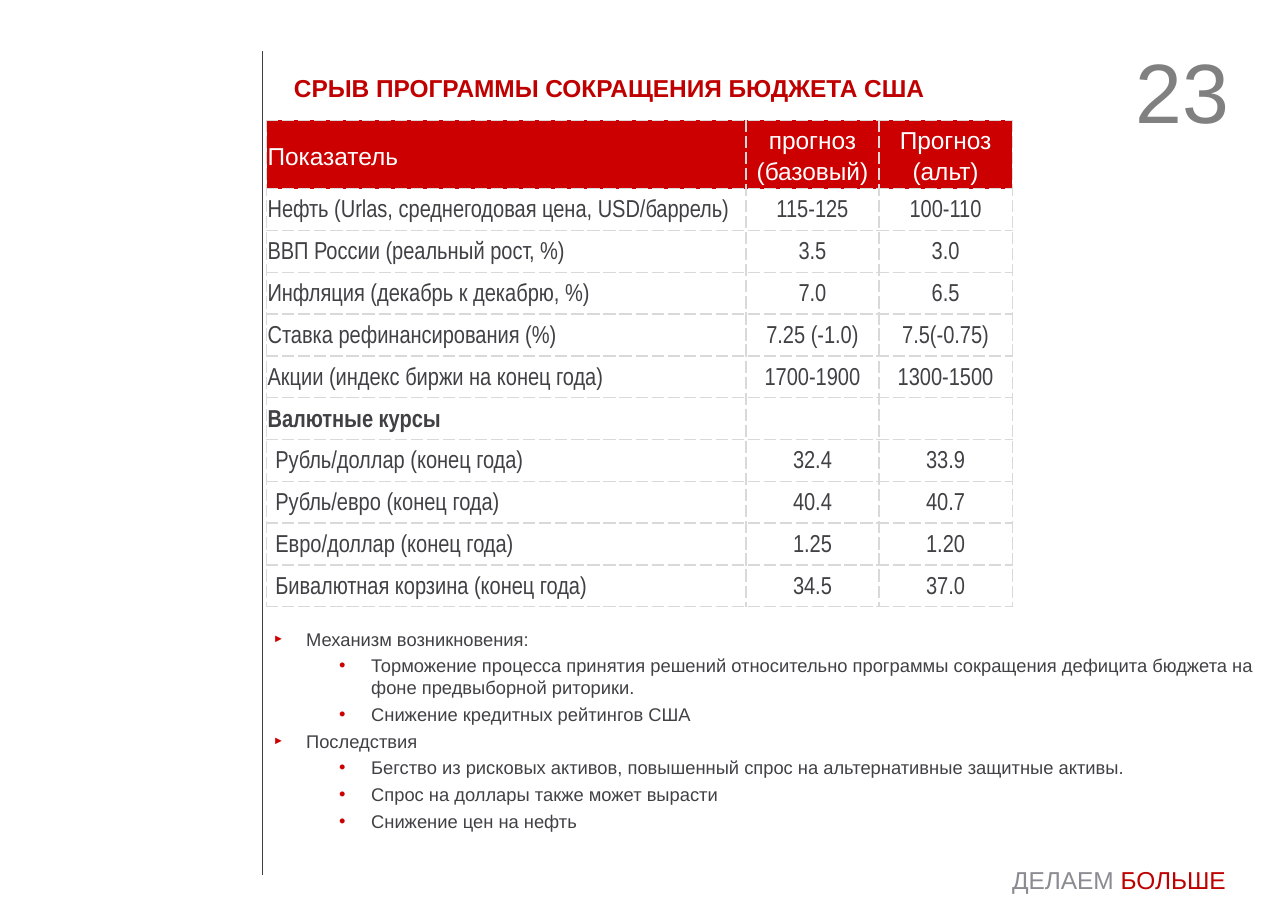
import pptx
import pptx.dml.color
import pptx.enum.shapes
import pptx.enum.text
import pptx.oxml
import pptx.oxml.ns
import pptx.util
from pptx.util import Cm

COLORS = {
    "rule": "3E3F43",
    "slogan": "8B8B92",
    "accent": "BE0000",
    "title": "C00000",
    "number": "808080",
    "header": "CC0000",
    "header_text": "FFFFFF",
    "body": "414145",
    "border": "D9D9D9",
    "bullet": "CC0000",
}
ALIGN = pptx.enum.text.PP_ALIGN
ANCHOR = pptx.enum.text.MSO_ANCHOR

HEADER = ("Показатель", "прогноз (базовый)", "Прогноз (альт)")
FORECASTS = [
    ("Нефть (Urlas, среднегодовая цена, USD/баррель)", "115-125", "100-110"),
    ("ВВП России (реальный рост, %)", "3.5", "3.0"),
    ("Инфляция (декабрь к декабрю, %)", "7.0", "6.5"),
    ("Ставка рефинансирования (%)", "7.25 (-1.0)", "7.5(-0.75)"),
    ("Акции (индекс биржи на конец года)", "1700-1900", "1300-1500"),
]
RATES_HEADING = ("Валютные курсы", "", "")
RATES = [
    ("Рубль/доллар (конец года)", "32.4", "33.9"),
    ("Рубль/евро (конец года)", "40.4", "40.7"),
    ("Евро/доллар (конец года)", "1.25", "1.20"),
    ("Бивалютная корзина (конец года)", "34.5", "37.0"),
]
SCENARIO = [
    ("Механизм возникновения:", [
        "Торможение процесса принятия решений относительно программы "
        "сокращения дефицита бюджета на фоне предвыборной риторики.",
        "Снижение кредитных рейтингов США",
    ]),
    ("Последствия", [
        "Бегство из рисковых активов, повышенный спрос на альтернативные "
        "защитные активы.",
        "Спрос на доллары также может вырасти",
        "Снижение цен на нефть",
    ]),
]


def rgb(name):
    return pptx.dml.color.RGBColor.from_string(COLORS[name])


def style(run, size, color, bold=False, face="Arial"):
    run.font.size = pptx.util.Pt(size)
    run.font.name = face
    run.font.bold = bold
    run.font.color.rgb = rgb(color)


def add_frame(slide, box):
    frame = slide.shapes.add_textbox(*box).text_frame
    frame.word_wrap = True
    return frame


def add_rule(slide, x, top, bottom):
    rule = slide.shapes.add_connector(
        pptx.enum.shapes.MSO_CONNECTOR.STRAIGHT, x, top, x, bottom)
    rule.line.color.rgb = rgb("rule")
    rule.line.width = pptx.util.Pt(0.75)
    properties = rule.element.spPr
    properties.append(pptx.oxml.parse_xml(
        f'<a:effectLst {pptx.oxml.ns.nsdecls("a")}/>'))


def add_title(slide, box):
    frame = add_frame(slide, box)
    frame.vertical_anchor = ANCHOR.MIDDLE
    frame.text = "СРЫВ ПРОГРАММЫ СОКРАЩЕНИЯ БЮДЖЕТА США"
    style(frame.paragraphs[0].runs[0], 16, "title", bold=True)


def add_page_number(slide, box):
    frame = add_frame(slide, box)
    frame.margin_left = frame.margin_right = Cm(0.28)
    frame.margin_top = frame.margin_bottom = Cm(0.15)
    frame.text = "23"
    frame.paragraphs[0].alignment = ALIGN.RIGHT
    style(frame.paragraphs[0].runs[0], 55, "number")


def add_slogan(slide, box):
    paragraph = add_frame(slide, box).paragraphs[0]
    for words, color in (("ДЕЛАЕМ", "slogan"), (" БОЛЬШЕ", "accent")):
        run = paragraph.add_run()
        run.text = words
        style(run, 16, color)


def add_dashed_borders(cell):
    properties = cell._tc.get_or_add_tcPr()
    for side in ("lnL", "lnR", "lnT", "lnB"):
        properties.append(pptx.oxml.parse_xml(
            f'<a:{side} {pptx.oxml.ns.nsdecls("a")} w="12700"><a:solidFill>'
            f'<a:srgbClr val="{COLORS["border"]}"/></a:solidFill>'
            f'<a:prstDash val="dash"/></a:{side}>'))


def fill_cell(cell, words, column, is_header, is_heading, is_rate):
    add_dashed_borders(cell)
    cell.margin_left = Cm(0.2 if is_rate and column == 0 else 0.02)
    cell.margin_right = cell.margin_top = Cm(0.02)
    cell.margin_bottom = 0
    cell.vertical_anchor = ANCHOR.MIDDLE
    if is_header:
        cell.fill.solid()
        cell.fill.fore_color.rgb = rgb("header")
    else:
        cell.fill.background()
    cell.text = words
    paragraph = cell.text_frame.paragraphs[0]
    paragraph.line_spacing = 1.15
    paragraph.alignment = ALIGN.CENTER if column else ALIGN.LEFT
    for run in paragraph.runs:
        if is_header:
            style(run, 16, "header_text")
        else:
            style(run, 16, "body", is_heading, "Arial Narrow")


def add_forecast_table(slide, box):
    rows = [HEADER, *FORECASTS, RATES_HEADING, *RATES]
    left, top, width, height = box
    table = slide.shapes.add_table(
        len(rows), len(HEADER), left, top, width, height).table
    table.first_row = table.horz_banding = False
    value_width = Cm(3.07)
    for column, table_column in enumerate(table.columns):
        table_column.width = value_width if column else width - 2 * value_width
    header_height = Cm(1.47)
    for index, row in enumerate(rows):
        body_height = (height - header_height) // (len(rows) - 1)
        table.rows[index].height = body_height if index else header_height
        for column, words in enumerate(row):
            fill_cell(table.cell(index, column), words, column,
                      row is HEADER, row is RATES_HEADING, row in RATES)


def set_bullet(paragraph, mark, percent, margin, hanging):
    properties = paragraph._p.get_or_add_pPr()
    properties.set("marL", str(margin))
    properties.set("indent", str(-hanging))
    for element in (f'buClr {{}}><a:srgbClr val="{COLORS["bullet"]}"/></a:buClr>',
                    f'buSzPct {{}} val="{percent * 1000}"/>',
                    'buFont {} typeface="Arial"/>',
                    f'buChar {{}} char="{mark}"/>'):
        properties.append(pptx.oxml.parse_xml(
            "<a:" + element.format(pptx.oxml.ns.nsdecls("a"))))


def add_scenario(slide, box):
    frame = add_frame(slide, box)
    lines = []
    for heading, points in SCENARIO:
        lines += [(heading, 0)] + [(point, 1) for point in points]
    for index, (words, level) in enumerate(lines):
        paragraph = frame.add_paragraph() if index else frame.paragraphs[0]
        paragraph.text = words
        paragraph.level = level
        if level:
            set_bullet(paragraph, "•", 100, Cm(2.26), Cm(0.74))
        else:
            set_bullet(paragraph, "►", 60, Cm(0.76), Cm(0.76))
        if index:
            paragraph.space_before = pptx.util.Pt(3)
        style(paragraph.runs[0], 12, "body")


def main():
    presentation = pptx.Presentation()
    presentation.slide_width, presentation.slide_height = Cm(29.7), Cm(21)
    slide = presentation.slides.add_slide(presentation.slide_layouts[6])
    add_rule(slide, Cm(6.05), Cm(1.17), Cm(20.17))
    add_slogan(slide, (Cm(23.09), Cm(19.81), Cm(6.48), Cm(0.94)))
    add_title(slide, (Cm(6.53), Cm(1.55), Cm(19.3), Cm(0.94)))
    add_page_number(slide, (Cm(23.62), Cm(0.76), Cm(5), Cm(2.06)))
    add_forecast_table(slide, (Cm(6.15), Cm(2.77), Cm(17.19), Cm(11.11)))
    add_scenario(slide, (Cm(6.05), Cm(14.35), Cm(23.65), Cm(6.6)))
    presentation.save("out.pptx")


if __name__ == "__main__":
    main()
